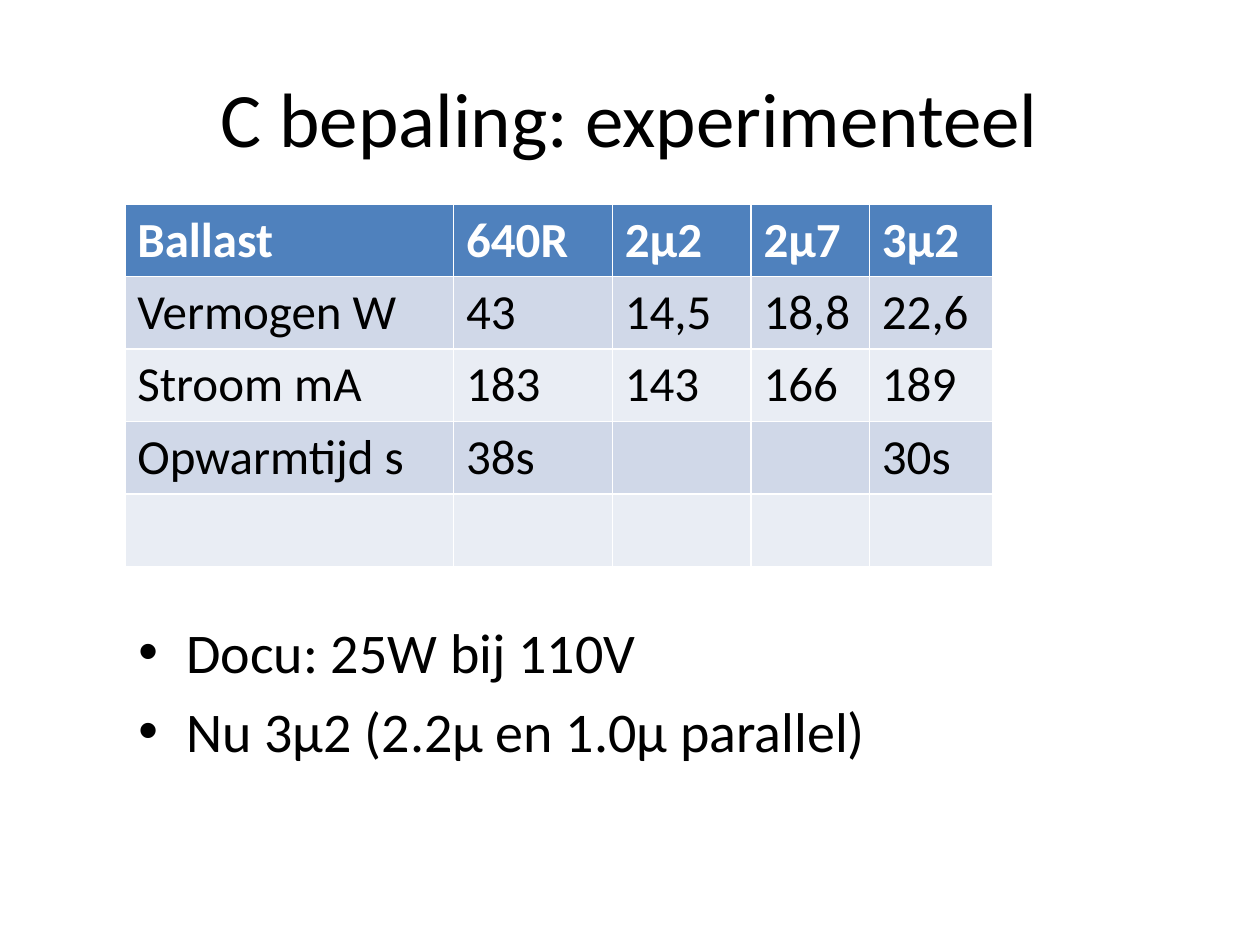
from lxml import etree
from pptx import Presentation
from pptx.dml.color import RGBColor
from pptx.enum.text import MSO_ANCHOR, PP_ALIGN
from pptx.oxml.ns import qn
from pptx.util import Inches, Pt

CENTER = PP_ALIGN.CENTER
MIDDLE = MSO_ANCHOR.MIDDLE
FONT = "Calibri"
BLACK, WHITE = "000000", "FFFFFF"
HEADER_FILL = "4F81BD"
BAND_FILLS = ("E9EDF4", "D0D8E8")

WIDTH, HEIGHT = 10, 7.5
COLUMN_WIDTHS = (2.61, 1.26, 1.1, 0.94, 0.98)
ROW_HEIGHT = 0.575
MEASUREMENTS = (
    ("Ballast", "640R", "2µ2", "2µ7", "3µ2"),
    ("Vermogen W", "43", "14,5", "18,8", "22,6"),
    ("Stroom mA", "183", "143", "166", "189"),
    ("Opwarmtijd s", "38s", "", "", "30s"),
    ("", "", "", "", ""),
)
NOTES = ("Docu: 25W bij 110V", "Nu 3µ2 (2.2µ en 1.0µ parallel)")


def rgb(color):
    return RGBColor.from_string(color)


def format_runs(p, size, color=BLACK, bold=False):
    for r in p.runs:
        r.font.name = FONT
        r.font.size = Pt(size)
        r.font.bold = bold
        r.font.color.rgb = rgb(color)


def add_text_frame(slide, left, top, width, height):
    """Add a wrapping text box, placed in shares of the slide's size."""
    sp = slide.shapes.add_textbox(
        Inches(left * WIDTH), Inches(top * HEIGHT),
        Inches(width * WIDTH), Inches(height * HEIGHT))
    sp.text_frame.word_wrap = True
    return sp.text_frame


def add_title(slide, text):
    tf = add_text_frame(slide, 0.05, 0.04, 0.9, 1 / 6)
    tf.vertical_anchor = MIDDLE
    tf.text = text
    p = tf.paragraphs[0]
    p.alignment = CENTER
    format_runs(p, 44)


def add_measurement_table(slide, rows):
    table = slide.shapes.add_table(
        len(rows), len(COLUMN_WIDTHS), Inches(0.99), Inches(1.62),
        Inches(sum(COLUMN_WIDTHS)), Inches(ROW_HEIGHT * len(rows))).table
    for column, width in zip(table.columns, COLUMN_WIDTHS):
        column.width = Inches(width)
    for i, values in enumerate(rows):
        header = i == 0
        for j, value in enumerate(values):
            cell = table.cell(i, j)
            cell.fill.solid()
            cell.fill.fore_color.rgb = rgb(HEADER_FILL if header else BAND_FILLS[i % 2])
            if value:
                cell.text = value
                format_runs(cell.text_frame.paragraphs[0], 28,
                            WHITE if header else BLACK, header)


def set_bullet(p, indent):
    pPr = p._p.get_or_add_pPr()
    pPr.set("marL", str(Inches(indent)))
    pPr.set("indent", str(-Inches(indent)))
    etree.SubElement(pPr, qn("a:buFont")).set("typeface", "Arial")
    etree.SubElement(pPr, qn("a:buChar")).set("char", "•")


def add_bullets(slide, lines, size=32):
    tf = add_text_frame(slide, 0.1, 0.647, 0.786, 0.22)
    tf.text = "\n".join(lines)
    for p in tf.paragraphs:
        p.space_before = Pt(0.2 * size)
        set_bullet(p, 0.38)
        format_runs(p, size)


def main():
    prs = Presentation()
    prs.slide_width, prs.slide_height = Inches(WIDTH), Inches(HEIGHT)
    slide = prs.slides.add_slide(prs.slide_layouts[6])
    add_title(slide, "C bepaling: experimenteel")
    add_measurement_table(slide, MEASUREMENTS)
    add_bullets(slide, NOTES)
    prs.save("out.pptx")


if __name__ == "__main__":
    main()
